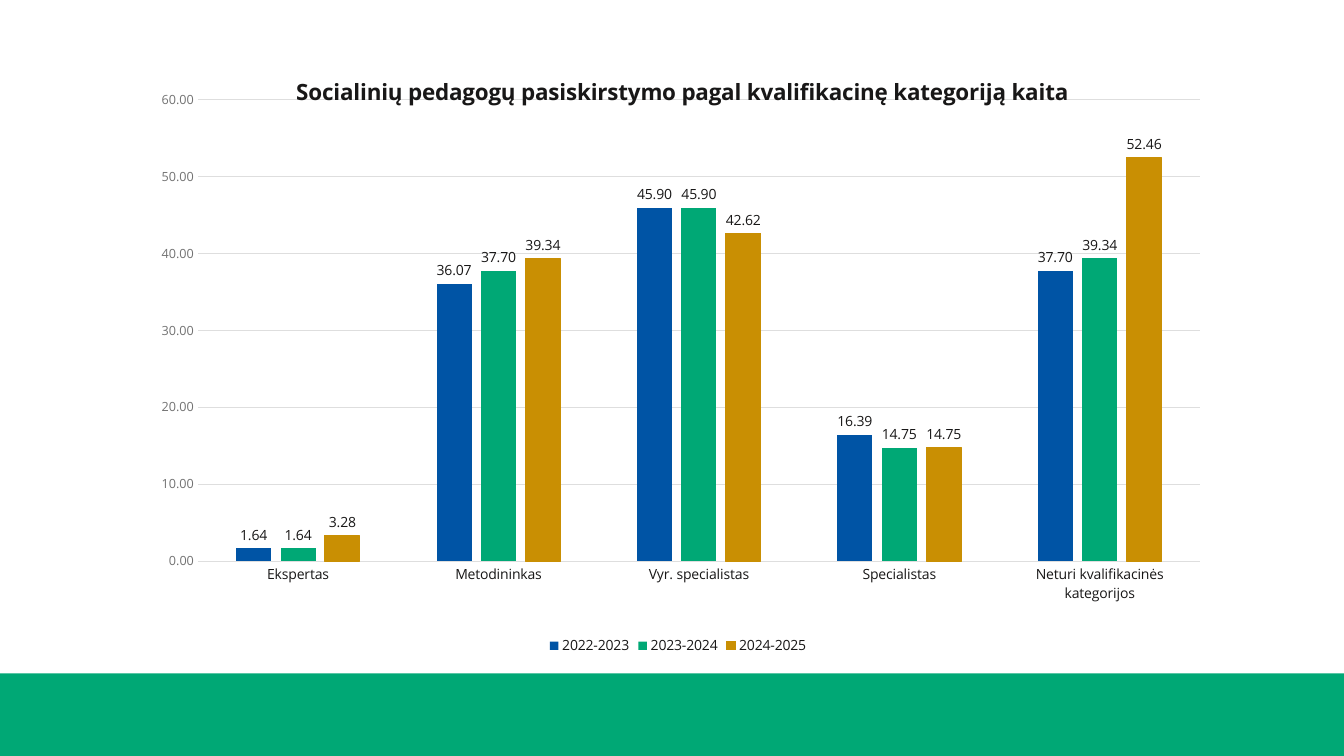
from lxml import etree
from pptx import Presentation
from pptx.chart import data
from pptx.dml import color
from pptx.enum import chart as chart_enum, shapes
from pptx.oxml import ns
from pptx.util import Inches, Pt

FONT = "Open Sans"
INK, GREY, GRID, GREEN = "181717", "727272", "DEDEDE", "00A875"

TITLE = "Socialinių pedagogų pasiskirstymo pagal kvalifikacinę kategoriją kaita"
CATEGORIES = ["Ekspertas", "Metodininkas", "Vyr. specialistas", "Specialistas",
              "Neturi kvalifikacinės kategorijos"]
YEARS = [
    ("2022-2023", "0054A5", (1.64, 36.07, 45.9, 16.39, 37.7)),
    ("2023-2024", GREEN, (1.64, 37.7, 45.9, 14.75, 39.34)),
    ("2024-2025", "C98F03", (3.28, 39.34, 42.62, 14.75, 52.46)),
]


def rgb(value):
    return color.RGBColor.from_string(value)


def set_fill(fill, value):
    fill.solid()
    fill.fore_color.rgb = rgb(value)


def set_line(line, value):
    line.width = Pt(0.75)
    set_fill(line.fill, value)


def set_font(font, size, value=INK, bold=False):
    for name, setting in {"name": FONT, "size": Pt(size), "bold": bold}.items():
        setattr(font, name, setting)
    font.color.rgb = rgb(value)


def set_layout(parent, position, **fractions):
    """Place a chart part by fractions of the chart area."""
    layout = parent.find(ns.qn("c:layout"))
    if layout is None:
        layout = etree.Element(ns.qn("c:layout"))
        parent.insert(position, layout)
    manual = etree.SubElement(layout, ns.qn("c:manualLayout"))
    settings = {"layoutTarget": "inner"} if "w" in fractions else {}
    settings.update(xMode="edge", yMode="edge", **fractions)
    for name, value in settings.items():
        etree.SubElement(manual, ns.qn(f"c:{name}")).set("val", str(value))


def add_band(slide):
    band = slide.shapes.add_shape(shapes.MSO_SHAPE.RECTANGLE, Inches(0),
                                  Inches(6.68), Inches(13.33), Inches(0.82))
    band.shadow.inherit = False
    set_fill(band.fill, GREEN)
    band.line.fill.background()


def add_column_chart(slide):
    chart_data = data.CategoryChartData(number_format="0.00")
    chart_data.categories = CATEGORIES
    for year, _, values in YEARS:
        chart_data.add_series(year, values)
    return slide.shapes.add_chart(
        chart_enum.XL_CHART_TYPE.COLUMN_CLUSTERED, Inches(1.41), Inches(0.46),
        Inches(10.63), Inches(6.08), chart_data).chart


def format_title(chart):
    chart.has_title = True
    paragraph = chart.chart_title.text_frame.paragraphs[0]
    run = paragraph.add_run()
    run.text = TITLE
    set_font(run.font, 16, bold=True)
    set_layout(chart.chart_title._element, 1, x=0.14, y=0.04)


def format_axes(chart):
    for axis, size, value in ((chart.category_axis, 10, INK),
                              (chart.value_axis, 9, GREY)):
        axis.major_tick_mark = axis.minor_tick_mark = chart_enum.XL_TICK_MARK.NONE
        set_font(axis.tick_labels.font, size, value)
    set_line(chart.category_axis.format.line, GRID)

    values = chart.value_axis
    for name, setting in {"minimum_scale": 0, "maximum_scale": 60,
                          "major_unit": 10, "has_major_gridlines": True}.items():
        setattr(values, name, setting)
    values.tick_labels.number_format = "0.00"
    values.tick_labels.number_format_is_linked = False
    values.format.line.fill.background()
    set_line(values.major_gridlines.format.line, GRID)


def format_columns(chart):
    plot = chart.plots[0]
    for name, setting in {"gap_width": 219, "overlap": -27,
                          "vary_by_categories": False}.items():
        setattr(plot, name, setting)
    for series, (_, value, _) in zip(plot.series, YEARS):
        set_fill(series.format.fill, value)
        series.invert_if_negative = False
        labels = series.data_labels
        for name, setting in {
            "show_value": True, "number_format": "0.00",
            "number_format_is_linked": False,
            "position": chart_enum.XL_LABEL_POSITION.OUTSIDE_END,
        }.items():
            setattr(labels, name, setting)
        set_font(labels.font, 10)
    set_line(plot.series[-1].format.line, YEARS[-1][1])


def format_legend(chart):
    chart.has_legend = True
    chart.legend.position = chart_enum.XL_LEGEND_POSITION.BOTTOM
    chart.legend.include_in_layout = False
    set_font(chart.legend.font, 10)


def main():
    presentation = Presentation()
    presentation.slide_width = Inches(13.33)
    presentation.slide_height = Inches(7.5)
    slide = presentation.slides.add_slide(presentation.slide_layouts[6])
    set_fill(slide.background.fill, "FFFFFF")

    # Footer band
    add_band(slide)

    # Column chart
    chart = add_column_chart(slide)
    set_font(chart.font, 10, "262626")
    format_title(chart)
    format_axes(chart)
    format_columns(chart)
    format_legend(chart)
    plot_area = chart._chartSpace.chart.plotArea
    set_layout(plot_area, 0, x=0.052, y=0.087, w=0.935, h=0.753)

    presentation.save("out.pptx")


if __name__ == "__main__":
    main()
